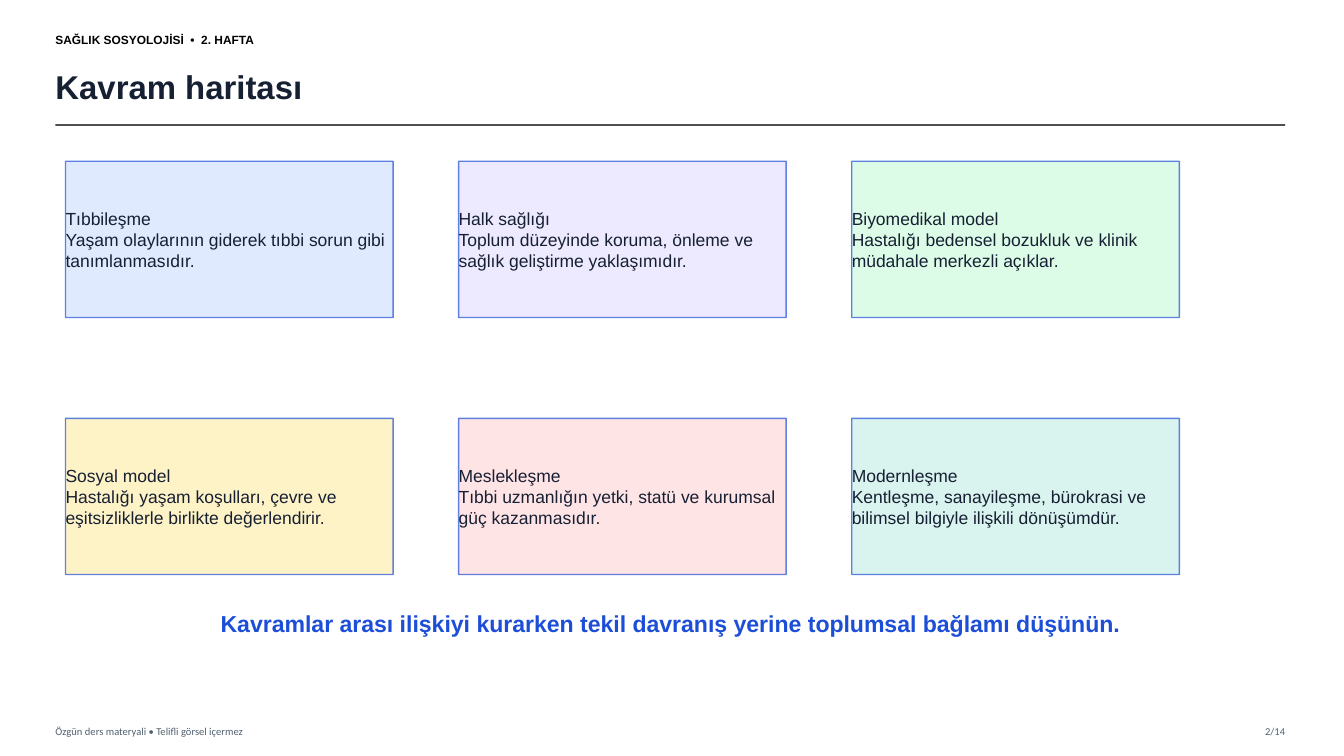
import pptx
import pptx.util
import pptx.dml.color
import pptx.enum.shapes
import pptx.enum.text
import pptx.oxml
import pptx.oxml.ns
from lxml import etree

Pt = pptx.util.Pt
ALIGN = pptx.enum.text.PP_ALIGN
ANCHOR = pptx.enum.text.MSO_ANCHOR
SHAPES = pptx.enum.shapes

COLORS = {"ink": "172033", "black": "000000", "gray": "506070", "rule": "333333",
          "blue": "1D4ED8", "sky": "DFEAFE", "violet": "EDE9FE", "green": "DCFCE7",
          "yellow": "FEF3C7", "rose": "FFE4E6", "teal": "D9F3EE"}

FORMATS = {
    "course": {"name": "Arial", "size": 8.5, "bold": True, "color": "black"},
    "title": {"name": "Arial", "size": 23.5, "bold": True, "color": "ink"},
    "card": {"name": "Arial", "size": 12.5, "bold": False, "color": "ink"},
    "hint": {"name": "Arial", "size": 16.5, "bold": True, "color": "blue"},
    "foot": {"name": "Calibri", "size": 7.5, "bold": False, "color": "gray"},
}

# text, (left, top, width, height), format, alignment, anchor
LABELS = [
    ("SAĞLIK SOSYOLOJİSİ  •  2. HAFTA", (39.6, 18, 259.2, 20.16),
     "course", ALIGN.LEFT, ANCHOR.MIDDLE),
    ("Kavram haritası", (39.6, 41.76, 860.4, 39.6), "title", ALIGN.LEFT, ANCHOR.MIDDLE),
    ("Özgün ders materyali • Telifli görsel içermez", (39.6, 514.08, 432, 15.84),
     "foot", ALIGN.LEFT, ANCHOR.MIDDLE),
    ("2/14", (871.2, 514.08, 46.8, 15.84), "foot", ALIGN.RIGHT, ANCHOR.MIDDLE),
    ("Kavramlar arası ilişkiyi kurarken tekil davranış yerine toplumsal bağlamı düşünün.",
     (72, 435.6, 813.6, 32.4), "hint", ALIGN.CENTER, ANCHOR.TOP),
]

CARDS = [
    ("Tıbbileşme", "Yaşam olaylarının giderek tıbbi sorun gibi tanımlanmasıdır.", "sky"),
    ("Halk sağlığı", "Toplum düzeyinde koruma, önleme ve sağlık geliştirme yaklaşımıdır.",
     "violet"),
    ("Biyomedikal model", "Hastalığı bedensel bozukluk ve klinik müdahale merkezli açıklar.",
     "green"),
    ("Sosyal model",
     "Hastalığı yaşam koşulları, çevre ve eşitsizliklerle birlikte değerlendirir.", "yellow"),
    ("Meslekleşme", "Tıbbi uzmanlığın yetki, statü ve kurumsal güç kazanmasıdır.", "rose"),
    ("Modernleşme",
     "Kentleşme, sanayileşme, bürokrasi ve bilimsel bilgiyle ilişkili dönüşümdür.", "teal"),
]
COLS = 3
LEFT, TOP = 46.8, 115.2
WIDTH, HEIGHT = 234, 111.6
STEP_X, STEP_Y = 280.8, 183.6
RULE = (39.6, 89.28, 918, 89.28)


def color(key):
    return pptx.dml.color.RGBColor.from_string(COLORS[key])


def points(values):
    return [Pt(value) for value in values]


def write(shape, lines, style, align, anchor):
    frame = shape.text_frame
    layout = {"word_wrap": True, "vertical_anchor": anchor, "margin_left": 0,
              "margin_right": 0, "margin_top": 0, "margin_bottom": 0}
    for key, value in layout.items():
        setattr(frame, key, value)
    look = dict(FORMATS[style])
    ink = color(look.pop("color"))
    look["size"] = Pt(look["size"])
    for i, line in enumerate(lines):
        para = frame.paragraphs[0] if i == 0 else frame.add_paragraph()
        para.alignment = align
        run = para.add_run()
        run.text = line
        for key, value in look.items():
            setattr(run.font, key, value)
        run.font.color.rgb = ink


def stroke(line, key, width, opacity):
    """Set a solid line with its opacity in percent."""
    line.width = Pt(width)
    line.fill.solid()
    line.fill.fore_color.rgb = color(key)
    tone = line.fill._xPr.find(".//" + pptx.oxml.ns.qn("a:srgbClr"))
    alpha = etree.SubElement(tone, pptx.oxml.ns.qn("a:alpha"))
    alpha.set("val", str(opacity * 1000))


def main():
    deck = pptx.Presentation()
    deck.slide_width, deck.slide_height = Pt(960), Pt(540)
    slide = deck.slides.add_slide(deck.slide_layouts[6])
    shapes = slide.shapes

    for text, box, style, align, anchor in LABELS:
        write(shapes.add_textbox(*points(box)), [text], style, align, anchor)

    rule = shapes.add_connector(SHAPES.MSO_CONNECTOR.STRAIGHT, *points(RULE))
    stroke(rule.line, "rule", 1.2, 85)
    etree.SubElement(rule._element.spPr, pptx.oxml.ns.qn("a:effectLst"))

    for i, (term, sense, fill) in enumerate(CARDS):
        row, col = divmod(i, COLS)
        box = (LEFT + col * STEP_X, TOP + row * STEP_Y, WIDTH, HEIGHT)
        card = shapes.add_shape(SHAPES.MSO_SHAPE.RECTANGLE, *points(box))
        card.shadow.inherit = False
        card.fill.solid()
        card.fill.fore_color.rgb = color(fill)
        stroke(card.line, "blue", 1, 70)
        write(card, [term, sense], "card", ALIGN.LEFT, ANCHOR.MIDDLE)

    deck.save("out.pptx")


if __name__ == "__main__":
    main()
